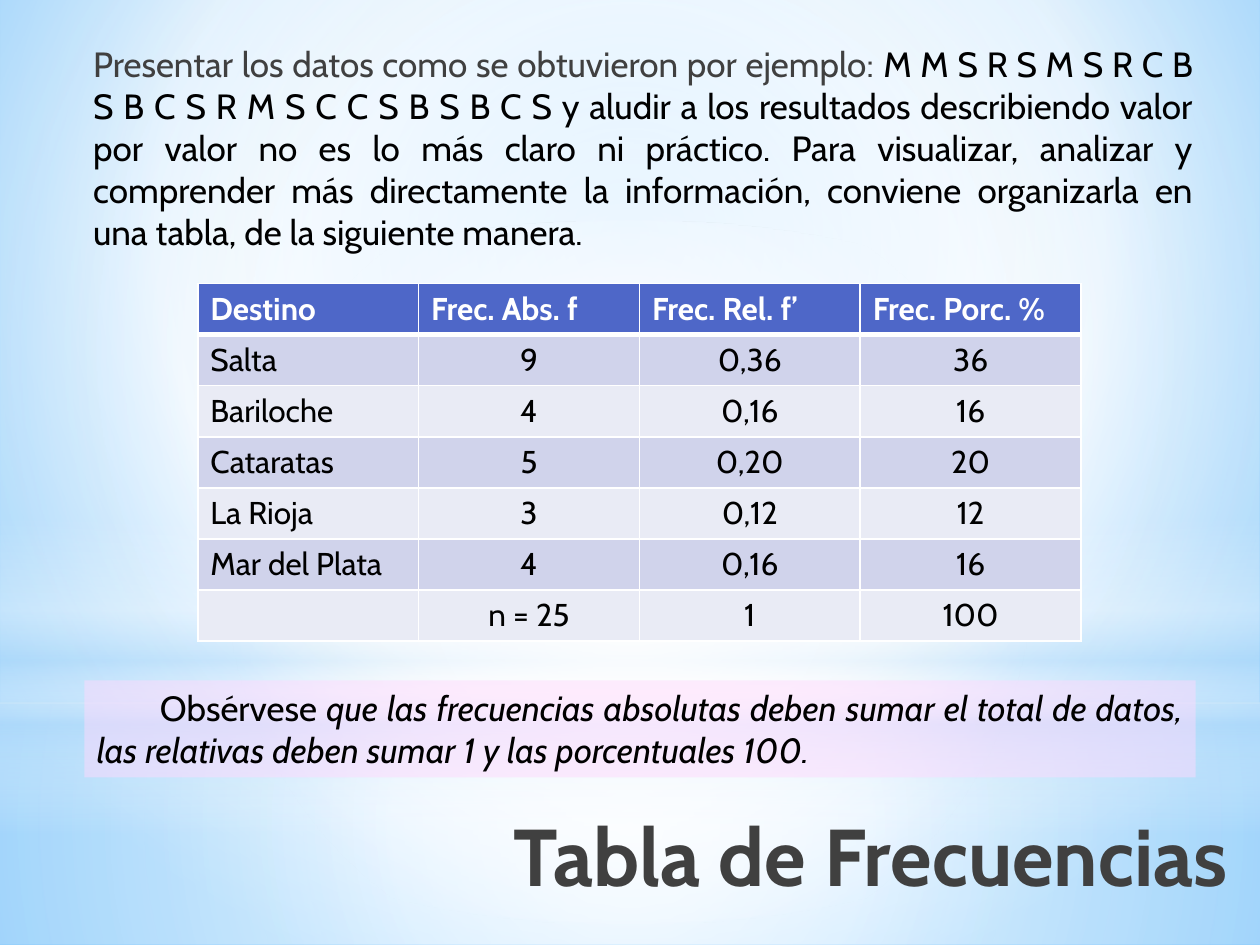
from lxml import etree
from pptx import Presentation
from pptx import util as u
from pptx.dml.color import RGBColor
from pptx.enum import shapes, text
from pptx.oxml import parse_xml
from pptx.oxml.ns import nsdecls, qn

COLORS = {
    "white": "FFFFFF", "sky": "9ED5FF", "deep": "5BB9FF", "pale": "B4DCFA",
    "header": "4E67C8", "odd": "D0D3EB", "even": "E9EBF5",
    "pink": "FEDAFD", "gray": "404040", "black": "000000",
}


def set_gradient(owner, stops, focus=None):
    old = owner.find(".//" + qn("a:gradFill"))
    marks = "".join(
        f'<a:gs pos="{pos * 1000}"><a:srgbClr val="{COLORS[name]}">'
        f'<a:alpha val="{alpha * 1000}"/></a:srgbClr></a:gs>'
        for pos, name, alpha in stops)
    if focus:
        sides = " ".join(f'{side}="{part * 1000}"' for side, part in zip("ltrb", focus))
        direction = f'<a:path path="circle"><a:fillToRect {sides}/></a:path>'
    else:
        direction = '<a:lin ang="5400000" scaled="0"/>'
    new = parse_xml(f'<a:gradFill {nsdecls("a")} rotWithShape="1">'
                    f'<a:gsLst>{marks}</a:gsLst>{direction}</a:gradFill>')
    old.getparent().replace(old, new)


def add_run(paragraph, words, color, **font_values):
    run = paragraph.add_run()
    run.text = words
    run.font.name = "Cabin"
    run.font.color.rgb = RGBColor.from_string(COLORS[color])
    for key, value in font_values.items():
        setattr(run.font, key, value)


prs = Presentation()
prs.slide_width, prs.slide_height = u.Inches(10), u.Inches(7.5)
slide = prs.slides.add_slide(prs.slide_layouts[6])

slide.background.fill.gradient()
set_gradient(slide.element, [(0, "sky", 100), (60, "white", 100), (100, "deep", 100)],
             (20, 10, 20, 60))

center = (50, 50, 50, 50)
rect, oval = shapes.MSO_SHAPE.RECTANGLE, shapes.MSO_SHAPE.OVAL
glows = [
    (rect, 5.58, 1.92, [(0, "white", 91), (37, "white", 76), (100, "pale", 79)], center),
    (rect, 0, 5.58, [(0, "white", 89), (48, "white", 62), (100, "pale", 79)], center),
    (rect, 4.12, 2.5, [(0, "white", 0), (29, "white", 30), (45, "pale", 40),
                       (55, "white", 26), (65, "pale", 60), (100, "white", 0)], None),
    (oval, 1.75, 5.58, [(0, "white", 100), (56, "white", 0)], center),
]
for outline, top, height, stops, focus in glows:
    glow = slide.shapes.add_shape(outline, 0, u.Inches(top), u.Inches(10), u.Inches(height))
    glow.shadow.inherit = False
    glow.line.fill.background()
    glow.fill.gradient()
    set_gradient(glow.element, stops, focus)

title = slide.shapes.add_textbox(u.Inches(2.72), u.Inches(6.35), u.Inches(7.12), u.Inches(1.25))
title.text_frame.word_wrap = True
heading = title.text_frame.paragraphs[0]
heading.alignment = text.PP_ALIGN.RIGHT
add_run(heading, "Tabla de Frecuencias", "gray", size=u.Pt(46), bold=True)

intro = slide.shapes.add_textbox(u.Inches(0.59), u.Inches(0.29), u.Inches(8.98), u.Inches(1.81))
intro.text_frame.word_wrap = True
explanation = intro.text_frame.paragraphs[0]
intro_format = {"alignment": text.PP_ALIGN.JUSTIFY, "space_before": u.Pt(4), "space_after": u.Pt(3)}
for key, value in intro_format.items():
    setattr(explanation, key, value)
explanation._p.get_or_add_pPr().set("marL", str(u.Inches(0.05)))
add_run(explanation, "Presentar los datos como se obtuvieron por ejemplo: ", "gray", size=u.Pt(20))
add_run(explanation,
        "M M S R S M S R C B S B C S R M S C C S B S B C S y aludir a los resultados "
        "describiendo valor por valor no es lo más claro ni práctico. Para visualizar, "
        "analizar y comprender más directamente la información, conviene organizarla en "
        "una tabla, de la siguiente manera.", "black", size=u.Pt(20))

frequencies = [
    ("Destino", "Frec. Abs. f", "Frec. Rel. f’", "Frec. Porc. %"),
    ("Salta", "9", "0,36", "36"),
    ("Bariloche", "4", "0,16", "16"),
    ("Cataratas", "5", "0,20", "20"),
    ("La Rioja", "3", "0,12", "12"),
    ("Mar del Plata", "4", "0,16", "16"),
    ("", "n = 25", "1", "100"),
]
table = slide.shapes.add_table(len(frequencies), 4, u.Inches(1.57), u.Inches(2.25),
                               u.Inches(7.01), u.Inches(2.84)).table
for r, record in enumerate(frequencies):
    is_header = r == 0
    band = "header" if is_header else "odd" if r % 2 else "even"
    for c, words in enumerate(record):
        cell = table.cell(r, c)
        properties = cell._tc.get_or_add_tcPr()
        for side in ("lnL", "lnR", "lnT", "lnB"):
            thick = (is_header and side == "lnB") or (r == 1 and side == "lnT")
            border = etree.SubElement(properties, qn("a:" + side), w=str(u.Pt(3 if thick else 1)))
            solid = etree.SubElement(border, qn("a:solidFill"))
            etree.SubElement(solid, qn("a:srgbClr"), val=COLORS["white"])
        cell.fill.solid()
        cell.fill.fore_color.rgb = RGBColor.from_string(COLORS[band])
        entry = cell.text_frame.paragraphs[0]
        if c and not is_header:
            entry.alignment = text.PP_ALIGN.CENTER
        if words:
            add_run(entry, words, "white" if is_header else "black",
                    size=u.Pt(18), bold=is_header)

remark = slide.shapes.add_shape(rect, u.Inches(0.67), u.Inches(5.4), u.Inches(8.82), u.Inches(0.77))
remark.shadow.inherit = False
remark.line.fill.background()
remark.fill.solid()
remark.fill.fore_color.rgb = RGBColor.from_string(COLORS["pink"])
pink = remark.element.spPr.find(qn("a:solidFill")).find(qn("a:srgbClr"))
etree.SubElement(pink, qn("a:alpha"), val="50000")
remark_format = {"word_wrap": True, "vertical_anchor": text.MSO_ANCHOR.TOP}
for key, value in remark_format.items():
    setattr(remark.text_frame, key, value)
observation = remark.text_frame.paragraphs[0]
observation.alignment = text.PP_ALIGN.JUSTIFY
add_run(observation, "\tObsérvese ", "black", size=u.Pt(20))
add_run(observation,
        "que las frecuencias absolutas deben sumar el total de datos, las relativas "
        "deben sumar 1 y las porcentuales 100.", "black", size=u.Pt(20), italic=True)

prs.save("out.pptx")
